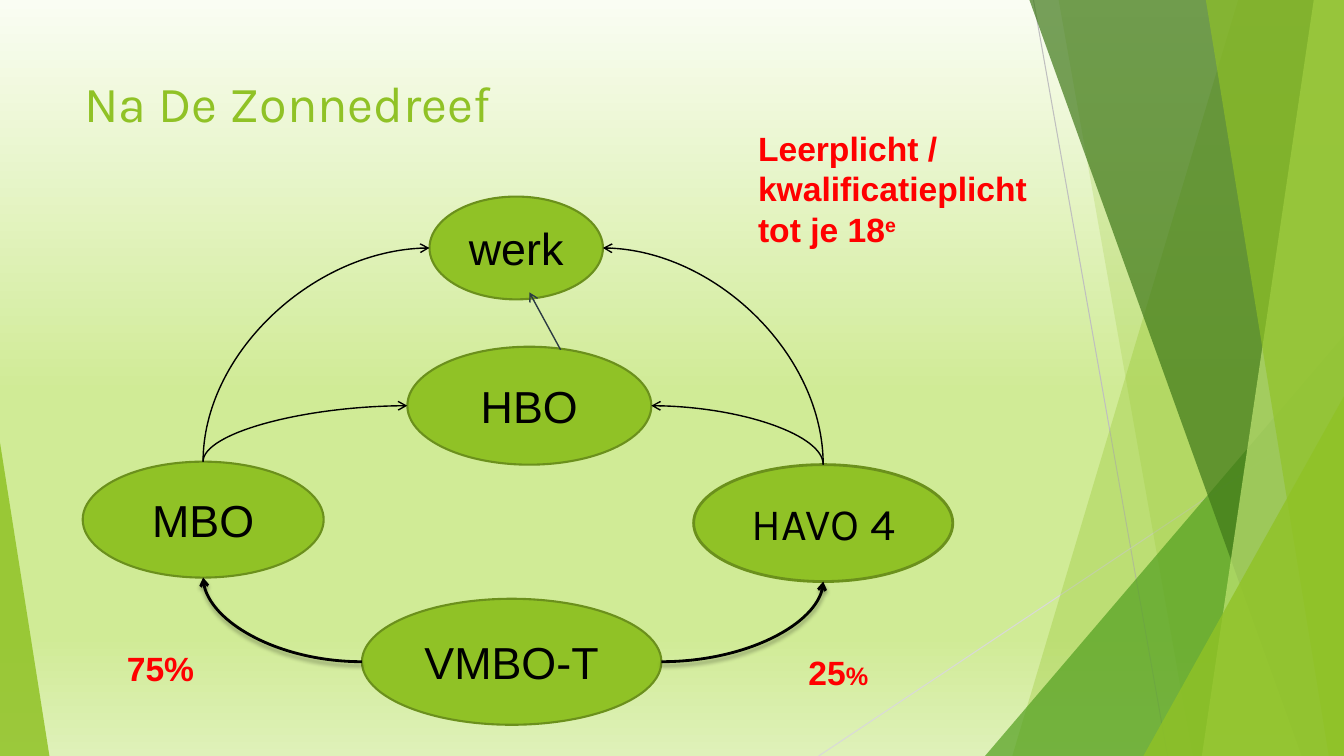
from lxml import etree
from pptx import Presentation
from pptx.dml.color import RGBColor
from pptx.enum.shapes import MSO_CONNECTOR as Connector, MSO_SHAPE as Shape
from pptx.enum.text import MSO_ANCHOR as Anchor, PP_ALIGN as Align
from pptx.oxml.ns import qn
from pptx.util import Inches, Pt

WIDTH, HEIGHT = 13.33, 7.5
COLORS = {
    "green": "90C226", "leaf": "54A021", "forest": "3F7819", "lime": "C0E474",
    "outline": "6B901C", "black": "000000", "red": "FF0000", "slate": "2C3C43",
    "gray": "BFBFBF", "light gray": "D9D9D9",
}
BACKGROUND = [(0, "FAFDF3"), (52, "D0EB96"), (84, "D0EB96"), (100, "DFF1B9")]

# Decoration: bands reach the right edge (top x, bottom x);
# corners are right triangles (left, top, width, apex position)
HAIRLINES = [((10.25, 0), (11.58, 7.5), "gray"), ((13.33, 4.03), (8.12, 7.5), "light gray")]
FACETS = [
    ("band", (12.28, 10.04), "green", 30),
    ("band", (10.5, 11.83), "green", 20),
    ("corner", (9.77, 3.33, 3.56, 1), "leaf", 72),
    ("band", (10.21, 12.91), "forest", 70),
    ("band", (13.03, 11.92), "lime", 70),
    ("band", (11.96, 13.18), "green", 65),
    ("corner", (11.34, 3.93, 1.99, 1), "green", 80),
    ("corner", (0, 4.39, 0.49, 0), "green", 85),
]

# School types: left, top, width, height, font, outline width
STAGES = {
    "MBO": (0.82, 4.58, 2.39, 1.15, "Arial", 1.5),
    "HBO": (4.04, 3.44, 2.42, 1.17, "Arial", 1.5),
    "HAVO 4": (6.88, 4.61, 2.57, 1.16, "Karla", 2),
    "VMBO-T": (3.59, 5.94, 2.97, 1.25, "Arial", 1.5),
    "werk": (4.26, 1.95, 1.72, 1.02, "Arial", 1.5),
}
# Curves: stage and side, stage and side, end with the arrowhead, line width
ROUTES = [
    ("VMBO-T", "left", "MBO", "bottom", "tailEnd", 2),
    ("VMBO-T", "right", "HAVO 4", "bottom", "tailEnd", 2),
    ("HBO", "left", "MBO", "top", "headEnd", 1),
    ("HBO", "right", "HAVO 4", "top", "headEnd", 1),
    ("werk", "right", "HAVO 4", "top", "headEnd", 1),
    ("werk", "left", "MBO", "top", "headEnd", 1),
]
HBO_TO_WERK = ((5.56, 3.47), (5.25, 2.9))

# Texts: box, main text, ending, size, ending size, ending baseline, font, color, bold
TEXTS = [
    ((0.74, 0.67, 9.4, 1.44), "Na De Zonnedreef", "", 36, None, None, "Karla", "green", False),
    ((7.42, 1.22, 3.01, 1.31), "Leerplicht / \vkwalificatieplicht \vtot je 18", "e",
     24, None, 30000, "Arial", "red", True),
    ((1.16, 6.38, 1.08, 0.5), "75%", "", 24, None, None, "Arial", "red", True),
    ((7.92, 6.42, 1.02, 0.5), "25", "%", 24, 18, None, "Arial", "red", True),
]


def rgb(name):
    return RGBColor.from_string(COLORS[name])


def add_child(parent, tag, **attributes):
    return etree.SubElement(parent, qn(tag), {key: str(value) for key, value in attributes.items()})


def style_font(font, name, size, color, bold=False):
    font.name, font.size, font.bold = name, Pt(size), bold
    font.color.rgb = rgb(color)


def add_line(shapes, kind, start, end, color, width, arrow_end=None):
    line = shapes.add_connector(kind, *(Inches(value) for value in (*start, *end)))
    line.line.color.rgb = rgb(color)
    line.line.width = Pt(width)
    if arrow_end:
        add_child(line.line._get_or_add_ln(), "a:" + arrow_end, type="arrow")
    add_child(line._element.spPr, "a:effectLst")
    return line


def add_facet(shapes, kind, geometry, color, opacity):
    if kind == "band":
        top_x, bottom_x = geometry
        corners = [(top_x, 0), (WIDTH, 0), (WIDTH, HEIGHT), (bottom_x, HEIGHT)]
        points = [(Inches(x), Inches(y)) for x, y in corners]
        builder = shapes.build_freeform(*points[0], scale=1.0)
        builder.add_line_segments(points[1:], close=True)
        facet = builder.convert_to_shape()
    else:
        left, top, width, apex = geometry
        box = (left, top, width, HEIGHT - top)
        facet = shapes.add_shape(Shape.ISOSCELES_TRIANGLE, *map(Inches, box))
        facet.adjustments[0] = apex
    facet.shadow.inherit = False
    facet.fill.solid()
    facet.fill.fore_color.rgb = rgb(color)
    facet.line.fill.background()
    fill_color = facet._element.spPr.find(qn("a:solidFill"))[0]
    add_child(fill_color, "a:alpha", val=opacity * 1000)


def add_stage(shapes, label, left, top, width, height, font, outline):
    oval = shapes.add_shape(Shape.OVAL, *map(Inches, (left, top, width, height)))
    oval.shadow.inherit = False
    oval.fill.solid()
    oval.fill.fore_color.rgb = rgb("green")
    oval.line.color.rgb = rgb("outline")
    oval.line.width = Pt(outline)
    oval.text_frame.vertical_anchor = Anchor.MIDDLE
    paragraph = oval.text_frame.paragraphs[0]
    paragraph.text = label
    paragraph.alignment = Align.CENTER
    style_font(paragraph.font, font, 32, "black")


def side_point(stage, side):
    left, top, width, height = STAGES[stage][:4]
    across, down = {"left": (0, 0.5), "right": (1, 0.5), "top": (0.5, 0), "bottom": (0.5, 1)}[side]
    return left + across * width, top + down * height


def add_route(shapes, stage, side, other, other_side, arrow_end, width):
    start, end = side_point(stage, side), side_point(other, other_side)
    curve = add_line(shapes, Connector.CURVE, start, end, "black", width, arrow_end)
    properties = curve._element.spPr
    properties.find(qn("a:prstGeom")).set("prst", "curvedConnector2")
    if width == 2:
        shadow = add_child(properties.find(qn("a:effectLst")), "a:outerShdw", blurRad=Pt(3),
                           dist=Pt(2), dir=5400000, rotWithShape=0)
        shade = add_child(shadow, "a:srgbClr", val=COLORS["black"])
        add_child(shade, "a:alpha", val=35000)


def add_text(shapes, box, text, ending, size, ending_size, baseline, font, color, bold):
    frame = shapes.add_textbox(*map(Inches, box)).text_frame
    frame.word_wrap = True
    paragraph = frame.paragraphs[0]
    paragraph.text = text
    style_font(paragraph.font, font, size, color, bold)
    if ending:
        run = paragraph.add_run()
        run.text = ending
        if ending_size:
            run.font.size = Pt(ending_size)
        if baseline:
            run._r.get_or_add_rPr().set("baseline", str(baseline))


def main():
    presentation = Presentation()
    presentation.slide_width, presentation.slide_height = Inches(WIDTH), Inches(HEIGHT)
    slide = presentation.slides.add_slide(presentation.slide_layouts[6])
    shapes = slide.shapes

    # Background gradient
    fill = slide.background.fill
    fill.gradient()
    fill.gradient_angle = 270
    stops = slide._element.find(".//" + qn("a:gsLst"))
    stops.clear()
    for position, color in BACKGROUND:
        add_child(add_child(stops, "a:gs", pos=position * 1000), "a:srgbClr", val=color)

    # Decoration
    for start, end, color in HAIRLINES:
        add_line(shapes, Connector.STRAIGHT, start, end, color, 0.75)
    for facet in FACETS:
        add_facet(shapes, *facet)

    # Diagram
    for label, stage in STAGES.items():
        add_stage(shapes, label, *stage)
    for route in ROUTES:
        add_route(shapes, *route)
    add_line(shapes, Connector.STRAIGHT, *HBO_TO_WERK, "slate", 1, "tailEnd")

    # Title and notes
    for text in TEXTS:
        add_text(shapes, *text)

    presentation.save("out.pptx")


if __name__ == "__main__":
    main()
